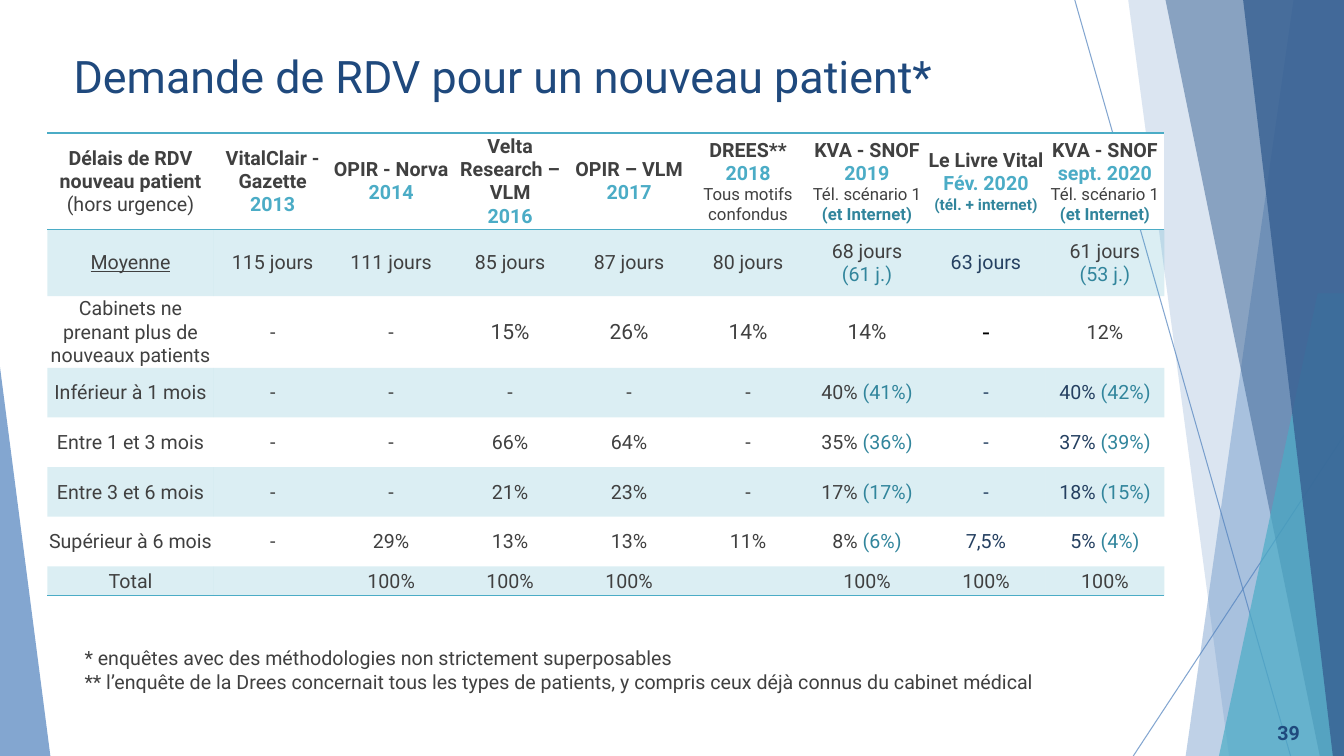
from dataclasses import dataclass

from lxml import etree
from pptx import Presentation
from pptx.dml.color import RGBColor
from pptx.enum.shapes import MSO_CONNECTOR, MSO_SHAPE
from pptx.enum.text import MSO_ANCHOR, PP_ALIGN
from pptx.oxml.ns import qn
from pptx.util import Inches, Pt

STRAIGHT = MSO_CONNECTOR.STRAIGHT
TRIANGLE = MSO_SHAPE.ISOSCELES_TRIANGLE
MIDDLE = MSO_ANCHOR.MIDDLE
LEFT, CENTER, RIGHT = PP_ALIGN.LEFT, PP_ALIGN.CENTER, PP_ALIGN.RIGHT
PLAIN_GRID = "{2D5ABB26-0587-4C30-8999-92F81FD0307C}"


@dataclass(frozen=True)
class Style:
    """Size, colour and weight of a piece of text."""
    size: int
    color: str
    bold: bool = False
    under: bool = False


class Theme:
    """Colours and text styles of the deck."""
    font = "Roboto"
    white, blue, deep, aqua = "FFFFFF", "4F81BD", "376092", "4BACC6"
    ink, teal, navy, title_blue = "404040", "31859C", "254061", "1F497D"
    title = Style(32, title_blue)
    page = Style(14, title_blue, True)
    body = Style(14, ink)
    label = Style(14, ink, under=True)
    large = Style(15, ink)
    dash = Style(18, "000000")
    dark = Style(14, navy)
    net = Style(14, teal)
    head = Style(14, ink, True)
    year = Style(14, aqua, True)
    small = Style(12, ink)
    web = Style(12, teal, True)
    tiny = Style(11, teal, True)


WIDTHS = [1.65, 1.17] + [1.18] * 7
HEIGHTS = [0.95, 0.66, 0.71] + [0.49] * 4 + [0.25]


def survey(name, year, *extra):
    """Return the paragraphs of a heading with its year on a new line."""
    return [[(name, Theme.head)], [(year, Theme.year)], *extra]


def phone(year):
    """Return the paragraphs of a heading for a phone and web survey."""
    return [[("KVA - SNOF ", Theme.head), (year, Theme.year)],
            [("Tél. scénario 1", Theme.small)], [("(et Internet)", Theme.web)]]


HEADS = [
    [[("Délais de RDV nouveau patient ", Theme.head), ("(hors urgence)", Theme.body)]],
    survey("VitalClair - Gazette", "2013"),
    survey("OPIR - Norva", "2014"),
    survey("Velta Research – VLM", "2016"),
    survey("OPIR – VLM", "2017"),
    survey("DREES**", "2018", [("Tous motifs confondus", Theme.small)]),
    phone("2019"),
    survey("Le Livre Vital", "Fév. 2020", [("(tél. + internet)", Theme.tiny)]),
    phone("sept. 2020"),
]
ROWS = [
    ["Moyenne", "115 jours", "111 jours", "85 jours", "87 jours", "80 jours",
     "68 jours\n(61 j.)", "63 jours", "61 jours\n(53 j.)"],
    ["Cabinets ne prenant plus de nouveaux patients", "-", "-", "15%", "26%", "14%",
     "14%", "-", "12%"],
    ["Inférieur à 1 mois", "-", "-", "-", "-", "-", "40% (41%)", "-", "40% (42%)"],
    ["Entre 1 et 3 mois", "-", "-", "66%", "64%", "-", "35% (36%)", "-", "37% (39%)"],
    ["Entre 3 et 6 mois", "-", "-", "21%", "23%", "-", "17% (17%)", "-", "18% (15%)"],
    ["Supérieur à 6 mois", "-", "29%", "13%", "13%", "11%", "8% (6%)", "7,5%", "5% (4%)"],
    ["Total", "", "100%", "100%", "100%", "", "100%", "100%", "100%"],
]


def set_font(font, style):
    """Apply a style to a font."""
    font.name, font.size, font.bold = Theme.font, Pt(style.size), style.bold
    font.underline = style.under
    font.color.rgb = RGBColor.from_string(style.color)


def write(frame, paras, align=LEFT):
    """Fill a text frame with paragraphs of (text, style) runs."""
    for i, runs in enumerate(paras):
        para = frame.paragraphs[0] if i == 0 else frame.add_paragraph()
        para.alignment = align
        for text, style in runs:
            run = para.add_run()
            run.text = text
            if len(runs) > 1:
                set_font(run.font, style)
        if len(runs) == 1:
            set_font(para.font, runs[0][1])


def paint(fill, color, alpha=100):
    """Set a solid fill with an opacity in percent."""
    fill.solid()
    fill.fore_color.rgb = RGBColor.from_string(color)
    if alpha < 100:
        tint = fill._xPr.find(".//" + qn("a:srgbClr"))
        etree.SubElement(tint, qn("a:alpha")).set("val", str(alpha * 1000))


def finish(shape, color, alpha):
    """Give a shape a flat fill without outline or shadow."""
    shape.shadow.inherit = False
    shape.line.fill.background()
    paint(shape.fill, color, alpha)


def add_rays(slide, left, top, width, height):
    """Draw the thin lines and the translucent facets on the right."""
    right, base = left + width, top + height
    for x1, y1, x2 in ((0, 0, 2.14), (2.67, 4.32, 0.58)):
        ray = slide.shapes.add_connector(
            STRAIGHT, Inches(left + x1), Inches(top + y1), Inches(left + x2), Inches(base))
        ray.line.width = Pt(0.75)
        paint(ray.line.fill, Theme.blue, 70)
        etree.SubElement(ray._element.spPr, qn("a:effectLst"))
    facets = [(2.17, 0, 1.1, Theme.blue, 36), (0.53, 0, 1.53, Theme.blue, 20),
              (0.9, 0, 2.43, Theme.deep, 50), (2.41, 2.91, 1.43, Theme.aqua, 70),
              (1.67, 0, 2.56, Theme.deep, 80)]
    for peak, drop, foot, color, alpha in facets:
        pen = slide.shapes.build_freeform(Inches(left + peak), Inches(top + drop))
        pen.add_line_segments([(Inches(x), Inches(y)) for x, y in (
            (right, top + drop), (right, base), (left + foot, base))])
        finish(pen.convert_to_shape(), color, alpha)


def add_wedge(slide, *box):
    """Draw the triangle at the lower left."""
    wedge = slide.shapes.add_shape(TRIANGLE, *map(Inches, box))
    wedge.adjustments[0] = 0
    finish(wedge, Theme.blue, 70)


def add_title(slide, text, *box):
    """Place and fill the title placeholder."""
    title = slide.shapes.title
    title.left, title.top, title.width, title.height = map(Inches, box)
    title.text_frame.vertical_anchor = MIDDLE
    write(title.text_frame, [[(text, Theme.title)]])


def add_rule(cell, side):
    """Draw a border on one side of a cell."""
    rule = etree.Element(qn("a:" + side), w=str(Pt(1)))
    solid = etree.SubElement(rule, qn("a:solidFill"))
    etree.SubElement(solid, qn("a:srgbClr")).set("val", Theme.aqua)
    cell._tc.get_or_add_tcPr().insert(0, rule)


def pick(row, col):
    """Return the main style of a body cell."""
    if (row, col) == (0, 0):
        return Theme.label
    if row == 1 and col == 7:
        return Theme.dash
    if row == 1 and 3 <= col <= 6:
        return Theme.large
    if (row == 0 and col == 7) or (2 <= row <= 5 and col >= 7):
        return Theme.dark
    return Theme.body


def split(text, style):
    """Return paragraphs with bracketed figures in the web colour."""
    paras = []
    for line in text.split("\n"):
        main, mark, rest = line.partition("(")
        runs = [(main, style), (mark + rest, Theme.net)]
        paras.append([run for run in runs if run[0]] or [("", style)])
    return paras


def add_delays(slide, left, top, width, height):
    """Build the table of waiting times."""
    frame = slide.shapes.add_table(
        len(HEIGHTS), len(WIDTHS), *map(Inches, (left, top, width, height)))
    table = frame.table
    table.first_row = table.horz_banding = False
    table._tbl.find(".//" + qn("a:tableStyleId")).text = PLAIN_GRID
    for col, size in zip(table.columns, WIDTHS):
        col.width = Inches(size * width / sum(WIDTHS))
    for row, size in zip(table.rows, HEIGHTS):
        row.height = Inches(size * height / sum(HEIGHTS))
    body = [[split(text, pick(r, c)) for c, text in enumerate(row)]
            for r, row in enumerate(ROWS)]
    for r, row in enumerate([HEADS] + body):
        for c, paras in enumerate(row):
            cell = table.cell(r, c)
            cell.vertical_anchor = MIDDLE
            cell.margin_left = cell.margin_right = cell.margin_top = Inches(0.01)
            cell.margin_bottom = 0
            write(cell.text_frame, paras, CENTER)
            if r == 0:
                paint(cell.fill, Theme.white)
            elif r % 2:
                paint(cell.fill, Theme.aqua, 20)
            else:
                cell.fill.background()
            if r in (0, len(ROWS)):
                add_rule(cell, "lnB")
            if r == 0:
                add_rule(cell, "lnT")


def add_text(slide, lines, style, align, wrap, *box):
    """Add a text box with one style."""
    frame = slide.shapes.add_textbox(*map(Inches, box)).text_frame
    frame.word_wrap = wrap
    frame.vertical_anchor = MIDDLE
    write(frame, [[(line, style)] for line in lines], align)


def main():
    """Build and save the slide."""
    deck = Presentation()
    deck.slide_width, deck.slide_height = Inches(13.33), Inches(7.5)
    slide = deck.slides.add_slide(deck.slide_layouts[5])
    add_rays(slide, 10.66, 0, 2.67, 7.5)
    add_wedge(slide, 0, 3.64, 0.5, 3.86)
    add_title(slide, "Demande de RDV pour un nouveau patient*", 0.63, 0.42, 9.4, 0.66)
    add_delays(slide, 0.47, 1.32, 11.08, 4.55)
    add_text(slide, [
        "* enquêtes avec des méthodologies non strictement superposables",
        "** l’enquête de la Drees concernait tous les types de patients, "
        "y compris ceux déjà connus du cabinet médical",
    ], Theme.body, LEFT, False, 0.74, 6.36, 9.86, 0.57)
    add_text(slide, ["39"], Theme.page, RIGHT, True, 12.24, 7.07, 0.75, 0.4)
    deck.save("out.pptx")


if __name__ == "__main__":
    main()
